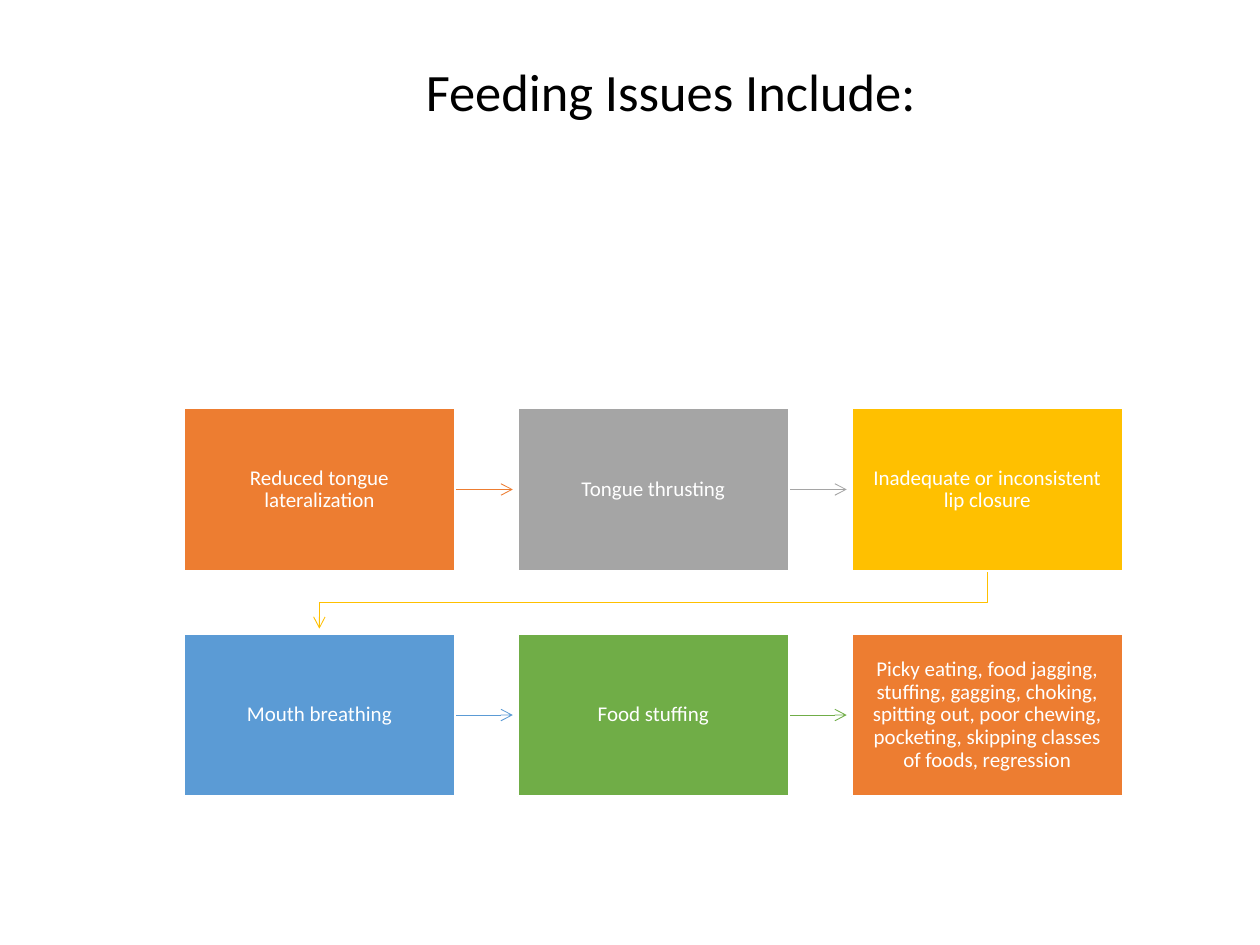
import pptx
import pptx.dml.color
import pptx.enum.shapes
import pptx.enum.text
import pptx.oxml
import pptx.oxml.ns
import pptx.util
from pptx.util import Inches

RGBColor = pptx.dml.color.RGBColor
BLACK = RGBColor(0x00, 0x00, 0x00)
WHITE = RGBColor(0xFF, 0xFF, 0xFF)
ORANGE = RGBColor(0xED, 0x7D, 0x31)
GREY = RGBColor(0xA5, 0xA5, 0xA5)
GOLD = RGBColor(0xFF, 0xC0, 0x00)
BLUE = RGBColor(0x5B, 0x9B, 0xD5)
GREEN = RGBColor(0x70, 0xAD, 0x47)

LEFT, TOP = 1.46, 3.24
WIDTH, HEIGHT = 2.15, 1.29
COLUMN_STEP, ROW_STEP = 2.65, 1.79
COLUMNS = 3
ARROW_LENGTH = 0.46
TURN_DROP = 0.25

ISSUES = [
    ("Reduced tongue lateralization", ORANGE),
    ("Tongue thrusting", GREY),
    ("Inadequate or inconsistent lip closure", GOLD),
    ("Mouth breathing", BLUE),
    ("Food stuffing", GREEN),
    ("Picky eating, food jagging, stuffing, gagging, choking, spitting out, "
     "poor chewing, pocketing, skipping classes of foods, regression", ORANGE),
]


class FlowSlide:
    font = "Calibri"
    title_size = 30
    step_size = 12
    inset = Inches(0.11)

    def __init__(self, slide):
        self.slide = slide

    def centred_text(self, frame, text, size, color):
        frame.word_wrap = True
        frame.vertical_anchor = pptx.enum.text.MSO_ANCHOR.MIDDLE
        paragraph = frame.paragraphs[0]
        paragraph.alignment = pptx.enum.text.PP_ALIGN.CENTER
        run = paragraph.add_run()
        run.text = text
        run.font.name = self.font
        run.font.size = pptx.util.Pt(size)
        run.font.color.rgb = color
        return paragraph

    def title(self, text, left, top, width, height):
        heading = self.slide.shapes.title
        heading.left, heading.top = Inches(left), Inches(top)
        heading.width, heading.height = Inches(width), Inches(height)
        self.centred_text(heading.text_frame, text, self.title_size, BLACK)

    def step(self, text, color, left, top):
        box = self.slide.shapes.add_shape(
            pptx.enum.shapes.MSO_SHAPE.RECTANGLE,
            Inches(left), Inches(top), Inches(WIDTH), Inches(HEIGHT))
        box.shadow.inherit = False
        box.fill.solid()
        box.fill.fore_color.rgb = color
        box.line.color.rgb = WHITE
        box.line.width = pptx.util.Pt(1)
        frame = box.text_frame
        frame.margin_left = frame.margin_right = self.inset
        frame.margin_top = frame.margin_bottom = self.inset
        paragraph = self.centred_text(frame, text, self.step_size, WHITE)
        paragraph.line_spacing = 0.9
        paragraph.space_after = pptx.util.Pt(4.2)

    def point_line(self, link, color):
        link.line.color.rgb = color
        link.line.width = pptx.util.Pt(0.5)
        head = pptx.oxml.parse_xml(
            f'<a:tailEnd {pptx.oxml.ns.nsdecls("a")} type="arrow"/>')
        link._element.spPr.get_or_add_ln().append(head)

    def arrow(self, color, left, middle):
        link = self.slide.shapes.add_connector(
            pptx.enum.shapes.MSO_CONNECTOR.STRAIGHT, Inches(left), Inches(middle),
            Inches(left + ARROW_LENGTH), Inches(middle))
        link._element.spPr.append(pptx.oxml.parse_xml(
            f'<a:effectLst {pptx.oxml.ns.nsdecls("a")}/>'))
        self.point_line(link, color)

    def turn(self, color, start_x, start_y, end_x):
        turn_y = start_y + TURN_DROP
        corners = [(start_x, turn_y), (end_x, turn_y),
                   (end_x, start_y + ARROW_LENGTH)]
        builder = self.slide.shapes.build_freeform(Inches(start_x), Inches(start_y))
        builder.add_line_segments(
            [(Inches(x), Inches(y)) for x, y in corners], close=False)
        route = builder.convert_to_shape()
        route.shadow.inherit = False
        route.fill.background()
        self.point_line(route, color)


def main():
    deck = pptx.Presentation()
    deck.slide_width, deck.slide_height = Inches(10), Inches(7.5)
    flow = FlowSlide(deck.slides.add_slide(deck.slide_layouts[5]))
    flow.title("Feeding Issues Include:", 1.27, 0.41, 8.11, 0.61)
    for index, (issue, color) in enumerate(ISSUES):
        row, column = divmod(index, COLUMNS)
        left, top = LEFT + column * COLUMN_STEP, TOP + row * ROW_STEP
        if column < COLUMNS - 1:
            flow.arrow(color, left + WIDTH, top + HEIGHT / 2)
        elif index < len(ISSUES) - 1:
            flow.turn(color, left + WIDTH / 2, top + HEIGHT, LEFT + WIDTH / 2)
        flow.step(issue, color, left, top)
    deck.save("out.pptx")


if __name__ == "__main__":
    main()
